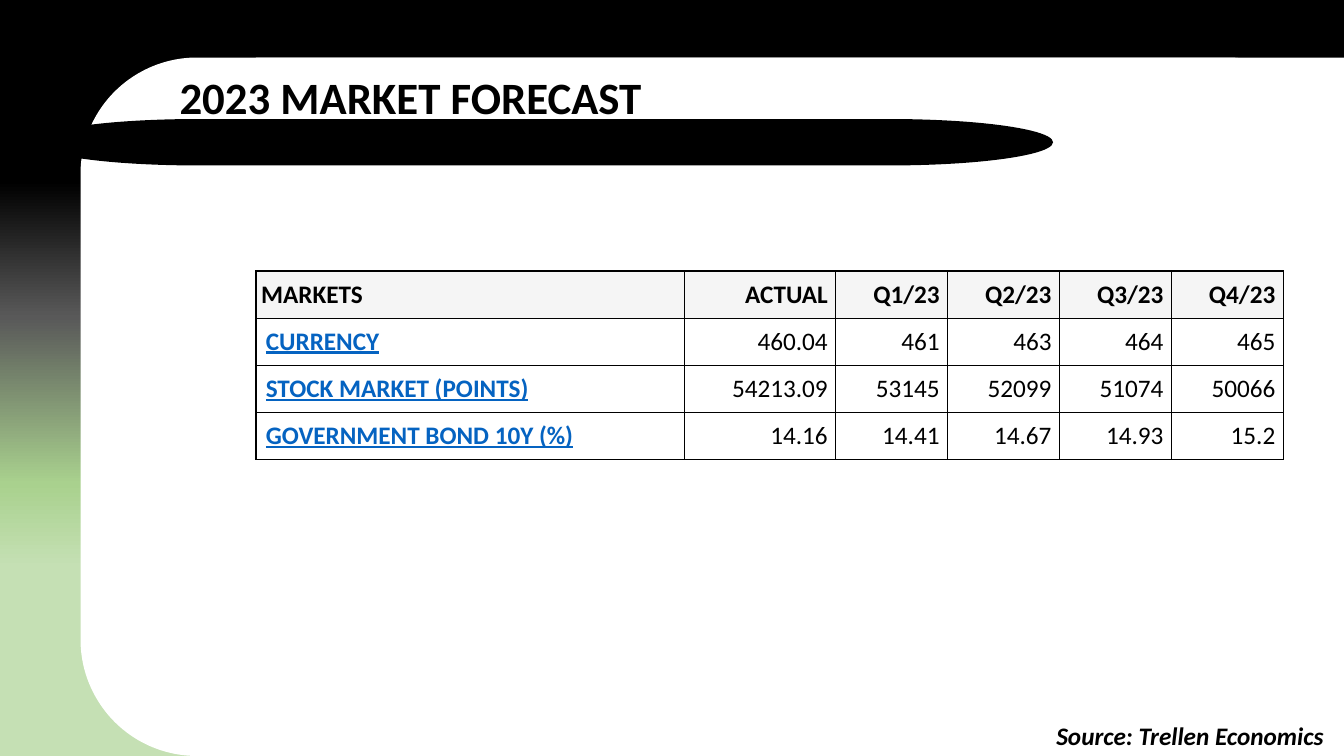
import pptx
import pptx.util
import pptx.dml.color
import pptx.enum.shapes
import pptx.enum.text
import pptx.oxml
import pptx.oxml.ns
import lxml.etree

Cm = pptx.util.Cm
Pt = pptx.util.Pt
RGBColor = pptx.dml.color.RGBColor
MSO_SHAPE = pptx.enum.shapes.MSO_SHAPE
PP_ALIGN = pptx.enum.text.PP_ALIGN
MSO_ANCHOR = pptx.enum.text.MSO_ANCHOR
qn = pptx.oxml.ns.qn

BLACK = RGBColor(0x00, 0x00, 0x00)
WHITE = RGBColor(0xFF, 0xFF, 0xFF)
HEADER_GREY = RGBColor(0xF5, 0xF5, 0xF5)
LINK_BLUE = RGBColor(0x05, 0x63, 0xC1)
PALE_GREEN = RGBColor(0xC5, 0xE0, 0xB4)
GREEN = RGBColor(0xA9, 0xD1, 0x8E)
DARK_GREY = RGBColor(0x59, 0x59, 0x59)

# Percent of the way up the slide, and colour
BACKGROUND_STOPS = [(25, PALE_GREEN), (36, GREEN), (58, DARK_GREY), (76, BLACK)]

MARKET_ROWS = [
    ["MARKETS", "ACTUAL", "Q1/23", "Q2/23", "Q3/23", "Q4/23"],
    ["CURRENCY", "460.04", "461", "463", "464", "465"],
    ["STOCK MARKET (POINTS)", "54213.09", "53145", "52099", "51074", "50066"],
    ["GOVERNMENT BOND 10Y (%)", "14.16", "14.41", "14.67", "14.93", "15.2"],
]
COLUMN_WIDTHS = [10.8, 3.81] + [2.82] * 4

BODY_FORMAT = {"name": "Calibri", "size": Pt(18), "bold": False}
HEADER_FORMAT = {**BODY_FORMAT, "bold": True}
LINK_FORMAT = {**HEADER_FORMAT, "underline": True}
SOURCE_FORMAT = {**HEADER_FORMAT, "italic": True}
TITLE_FORMAT = {**HEADER_FORMAT, "size": Pt(32)}


def write_text(text_frame, text, font_format, color=BLACK, alignment=PP_ALIGN.LEFT):
    paragraph = text_frame.paragraphs[0]
    paragraph.alignment = alignment
    run = paragraph.add_run()
    run.text = text
    for attribute, value in font_format.items():
        setattr(run.font, attribute, value)
    run.font.color.rgb = color


def paint_background(slide):
    fill = slide.background.fill
    fill.gradient()
    fill.gradient_angle = 90
    stop_list = next(slide.element.iter(qn("a:gsLst")))
    for stop in list(stop_list):
        stop_list.remove(stop)
    for percent, color in BACKGROUND_STOPS:
        stop = lxml.etree.SubElement(stop_list, qn("a:gs"), pos=str(percent * 1000))
        lxml.etree.SubElement(stop, qn("a:srgbClr"), val=str(color))


def add_plain_shape(slide, shape_type, color, left, top, width, height):
    shape = slide.shapes.add_shape(shape_type, Cm(left), Cm(top), Cm(width), Cm(height))
    shape.shadow.inherit = False
    shape.fill.solid()
    shape.fill.fore_color.rgb = color
    shape.line.fill.background()


def add_panel(slide, left, top, width, height):
    # Square right side over a panel with rounded left corners
    square_offset = 4.42
    add_plain_shape(slide, MSO_SHAPE.RECTANGLE, WHITE,
                    left + square_offset, top, width - square_offset, height)
    add_plain_shape(slide, MSO_SHAPE.ROUNDED_RECTANGLE, WHITE, left, top, width, height)
    # Black bar under the title
    add_plain_shape(slide, MSO_SHAPE.FLOWCHART_TERMINATOR, BLACK,
                    left - 1.17, top + 1.55, 25.68, 1.17)


def add_title(slide, left, top, width, height):
    title = slide.shapes.title
    title.left, title.top, title.width, title.height = map(Cm, (left, top, width, height))
    title.text_frame.auto_size = pptx.enum.text.MSO_AUTO_SIZE.NONE
    title.text_frame.vertical_anchor = MSO_ANCHOR.TOP
    write_text(title.text_frame, "2023 MARKET FORECAST", TITLE_FORMAT)
    # Bring the title in front of the panel
    slide.shapes.element.append(title.element)


def add_source(slide, left, top, width, height):
    box = slide.shapes.add_textbox(Cm(left), Cm(top), Cm(width), Cm(height))
    box.text_frame.word_wrap = True
    write_text(box.text_frame, "Source: Trellen Economics", SOURCE_FORMAT)


def add_borders(cell):
    properties = cell._tc.get_or_add_tcPr()
    for side in ("a:lnL", "a:lnR", "a:lnT", "a:lnB"):
        line = lxml.etree.SubElement(properties, qn(side), w=str(Pt(1)))
        fill = lxml.etree.SubElement(line, qn("a:solidFill"))
        lxml.etree.SubElement(fill, qn("a:srgbClr"), val=str(BLACK))


def format_cell(cell, text, is_header, is_label):
    add_borders(cell)
    if is_header:
        cell.fill.solid()
        cell.fill.fore_color.rgb = HEADER_GREY
        cell.vertical_anchor = MSO_ANCHOR.BOTTOM
    else:
        cell.fill.background()
        cell.vertical_anchor = MSO_ANCHOR.TOP
    label_margin = 0.13 if is_header else 0.25
    cell.margin_left = Cm(label_margin if is_label else 0.2)
    cell.margin_right = cell.margin_top = cell.margin_bottom = Cm(0.2)
    is_link = is_label and not is_header
    font_format = HEADER_FORMAT if is_header else LINK_FORMAT if is_link else BODY_FORMAT
    write_text(cell.text_frame, text, font_format,
               LINK_BLUE if is_link else BLACK,
               PP_ALIGN.LEFT if is_label else PP_ALIGN.RIGHT)


def add_market_table(slide, left, top, width, height):
    table = slide.shapes.add_table(len(MARKET_ROWS), len(COLUMN_WIDTHS),
                                   Cm(left), Cm(top), Cm(width), Cm(height)).table
    table.first_row = table.horz_banding = False
    for column, column_width in zip(table.columns, COLUMN_WIDTHS):
        column.width = Cm(column_width)
    for row_index, texts in enumerate(MARKET_ROWS):
        for column_index, text in enumerate(texts):
            format_cell(table.cell(row_index, column_index), text,
                        row_index == 0, column_index == 0)


def main():
    presentation = pptx.Presentation()
    presentation.slide_width = Cm(33.87)
    presentation.slide_height = Cm(19.05)
    slide = presentation.slides.add_slide(presentation.slide_layouts[5])
    paint_background(slide)
    add_panel(slide, 2.03, 1.45, 31.84, 17.6)
    add_source(slide, 26.37, 18.03, 8.69, 1.02)
    add_market_table(slide, 6.45, 6.83, sum(COLUMN_WIDTHS), 4.75)
    add_title(slide, 4.27, 1.63, 14.81, 1.63)
    presentation.save("out.pptx")


if __name__ == "__main__":
    main()
